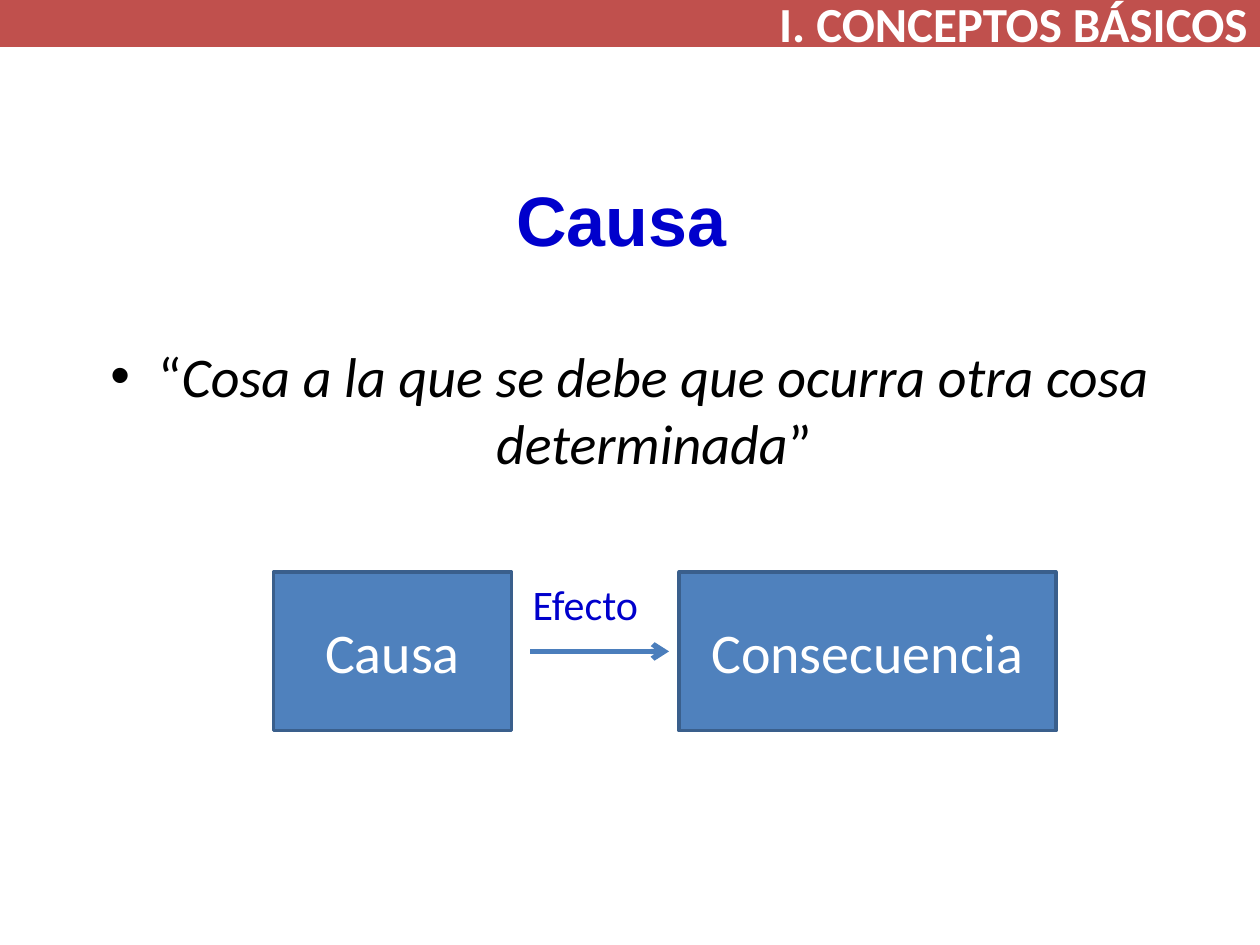
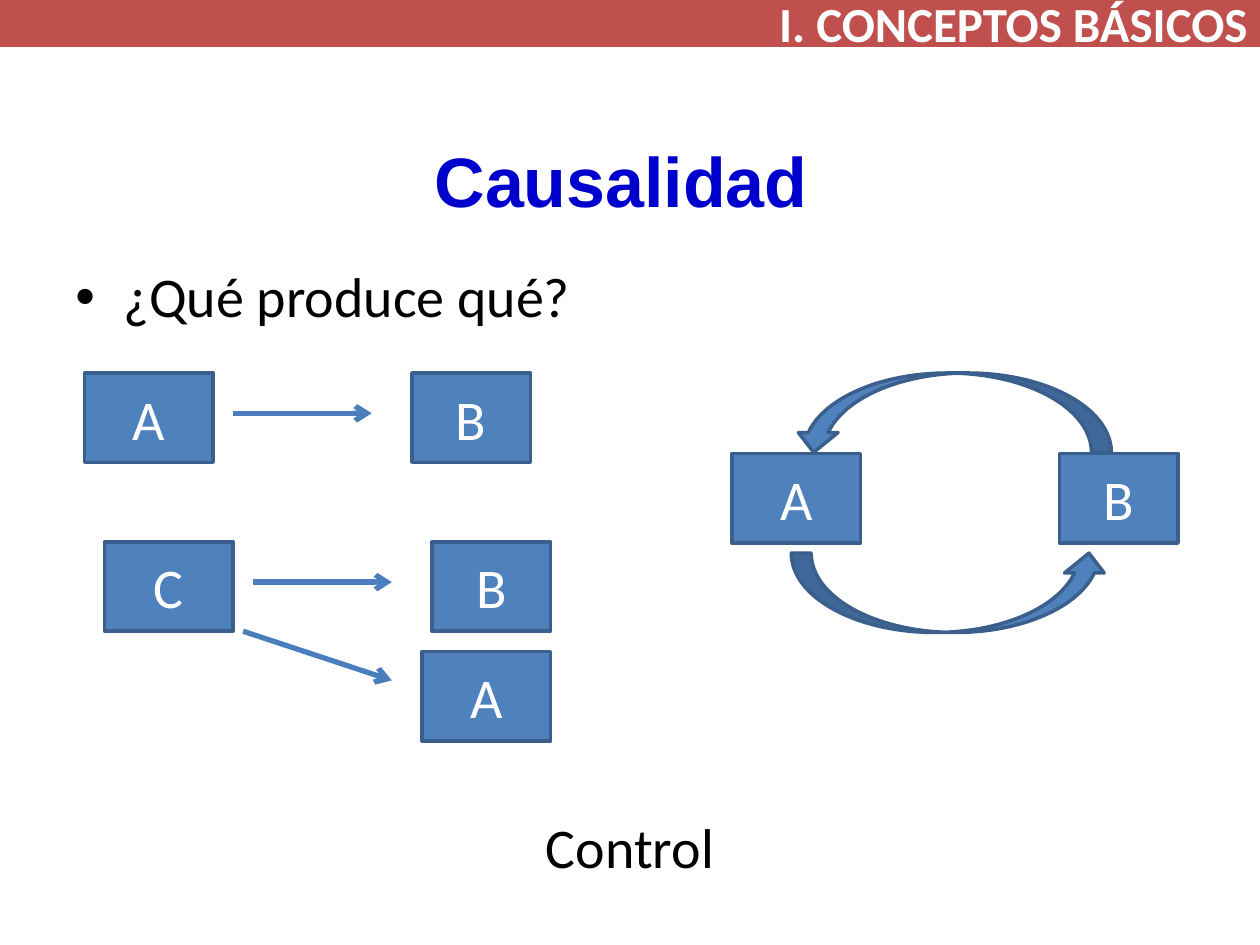
from pptx import Presentation
from pptx.dml.color import RGBColor
from pptx.enum.shapes import MSO_CONNECTOR, MSO_SHAPE
from pptx.enum.text import MSO_ANCHOR, PP_ALIGN
from pptx.oxml.ns import qn
from pptx.util import Inches, Pt
from lxml import etree

RECT, CURVE = MSO_SHAPE.RECTANGLE, MSO_SHAPE.CURVED_UP_ARROW
LEFT, MID, RIGHT = PP_ALIGN.LEFT, PP_ALIGN.CENTER, PP_ALIGN.RIGHT
TOP, CENTER = MSO_ANCHOR.TOP, MSO_ANCHOR.MIDDLE

# Shared look
RED, BLUE, EDGE, LINK = "C0504D", "4F81BD", "3A5F8C", "4B7EBC"
INK, TITLE, WHITE = "000000", "0000CC", "FFFFFF"
HEAD = "I. CONCEPTOS BÁSICOS"
INDENT = 0.38

# Slide 1: cause, effect and consequence
QUOTE = [("“", False),
         ("Cosa a la que se debe que ocurra otra cosa determinada", True),
         ("”", False)]
CHAIN = [("Causa", 2.17, 1.89), ("Consecuencia", 5.39, 2.99)]
CHAIN_TOP, CHAIN_HIGH = 4.54, 1.26

# Slide 2: pairs as (left, top, first, second, has arrow)
PAIRS = [(0.67, 2.96, "A", "B", True),
         (5.81, 3.6, "A", "B", False),
         (0.83, 4.3, "C", "B", True)]
WIDE, SLIM, HIGH, STEP = 1.02, 0.94, 0.71, 2.6
LOOPS = [(6.28, 4.39, 0), (6.3, 2.96, 180)]


def color(code):
    return RGBColor.from_string(code)


def write(shape, parts, size, code, align=MID, font="Calibri",
          bold=False, anchor=CENTER):
    """Fill a shape with one paragraph made of (text, italic) parts."""
    frame = shape.text_frame
    frame.word_wrap = True
    frame.vertical_anchor = anchor
    para = frame.paragraphs[0]
    para.alignment = align
    for text, slant in parts:
        run = para.add_run()
        run.text = text
        run.font.name, run.font.size = font, Pt(size)
        run.font.bold, run.font.italic = bold, slant
        run.font.color.rgb = color(code)
    return para


def label(slide, at, parts, size, code, **style):
    box = slide.shapes.add_textbox(*map(Inches, at))
    return write(box, parts, size, code, **style)


def bullet(para):
    props = para._p.get_or_add_pPr()
    props.set("marL", str(Inches(INDENT)))
    props.set("indent", str(-Inches(INDENT)))
    etree.SubElement(props, qn("a:buFont")).set("typeface", "Arial")
    etree.SubElement(props, qn("a:buChar")).set("char", "•")


def block(slide, at, fill=BLUE, edge=EDGE, kind=RECT):
    shape = slide.shapes.add_shape(kind, *map(Inches, at))
    shape.shadow.inherit = False
    shape.fill.solid()
    shape.fill.fore_color.rgb = color(fill)
    shape.line.color.rgb = color(edge)
    shape.line.width = Pt(2)
    return shape


def node(slide, text, *at):
    write(block(slide, at), [(text, False)], 32, WHITE)


def arrow(slide, *ends):
    link = slide.shapes.add_connector(MSO_CONNECTOR.STRAIGHT,
                                      *map(Inches, ends))
    link.line.color.rgb = color(LINK)
    link.line.width = Pt(3)
    line = link.line._get_or_add_ln()
    etree.SubElement(line, qn("a:tailEnd")).set("type", "arrow")
    etree.SubElement(link._element.spPr, qn("a:effectLst"))


def start(deck, title, top):
    """Add a slide with the red band and its title."""
    slide = deck.slides.add_slide(deck.slide_layouts[6])
    band = block(slide, (0, 0, 10, 0.36), RED, RED)
    write(band, [(HEAD, False)], 28, WHITE, align=RIGHT, bold=True)
    label(slide, (0.43, top, 9, 1.49), [(title, False)], 40, TITLE,
          font="Arial", bold=True)
    return slide


def cause(deck):
    slide = start(deck, "Causa", 0.99)
    bullet(label(slide, (0.5, 2.66, 9, 1.3), QUOTE, 32, INK, anchor=TOP))
    for text, left, width in CHAIN:
        node(slide, text, left, CHAIN_TOP, width, CHAIN_HIGH)
    mid = CHAIN_TOP + CHAIN_HIGH / 2
    arrow(slide, 4.21, mid, 5.31, mid)
    label(slide, (4.13, CHAIN_TOP, 1.5, 0.5), [("Efecto", False)], 24, TITLE,
          align=LEFT, anchor=TOP)


def causal(deck):
    slide = start(deck, "Causalidad", 0.68)
    bullet(label(slide, (0.5, 2.03, 9, 0.65), [("¿Qué produce qué?", False)],
                 32, INK, align=LEFT, anchor=TOP))
    label(slide, (0.5, 6.4, 9, 0.65), [("Control", False)], 32, INK,
          anchor=TOP)

    # Pairs of boxes, most with an arrow between
    for left, top, first, second, linked in PAIRS:
        node(slide, first, left, top, WIDE, HIGH)
        node(slide, second, left + STEP, top, SLIM, HIGH)
        if linked:
            level = top + 0.32
            arrow(slide, left + 1.18, level, left + 2.28, level)

    # Second result of C
    node(slide, "A", 3.35, 5.17, WIDE, HIGH)
    arrow(slide, 1.93, 5.01, 3.11, 5.4)

    # Loop between A and B
    for left, top, turn in LOOPS:
        block(slide, (left, top, 2.52, 0.63), kind=CURVE).rotation = turn


def main():
    deck = Presentation()
    deck.slide_width, deck.slide_height = Inches(10), Inches(7.5)
    cause(deck)
    causal(deck)
    deck.save("out.pptx")


if __name__ == "__main__":
    main()
